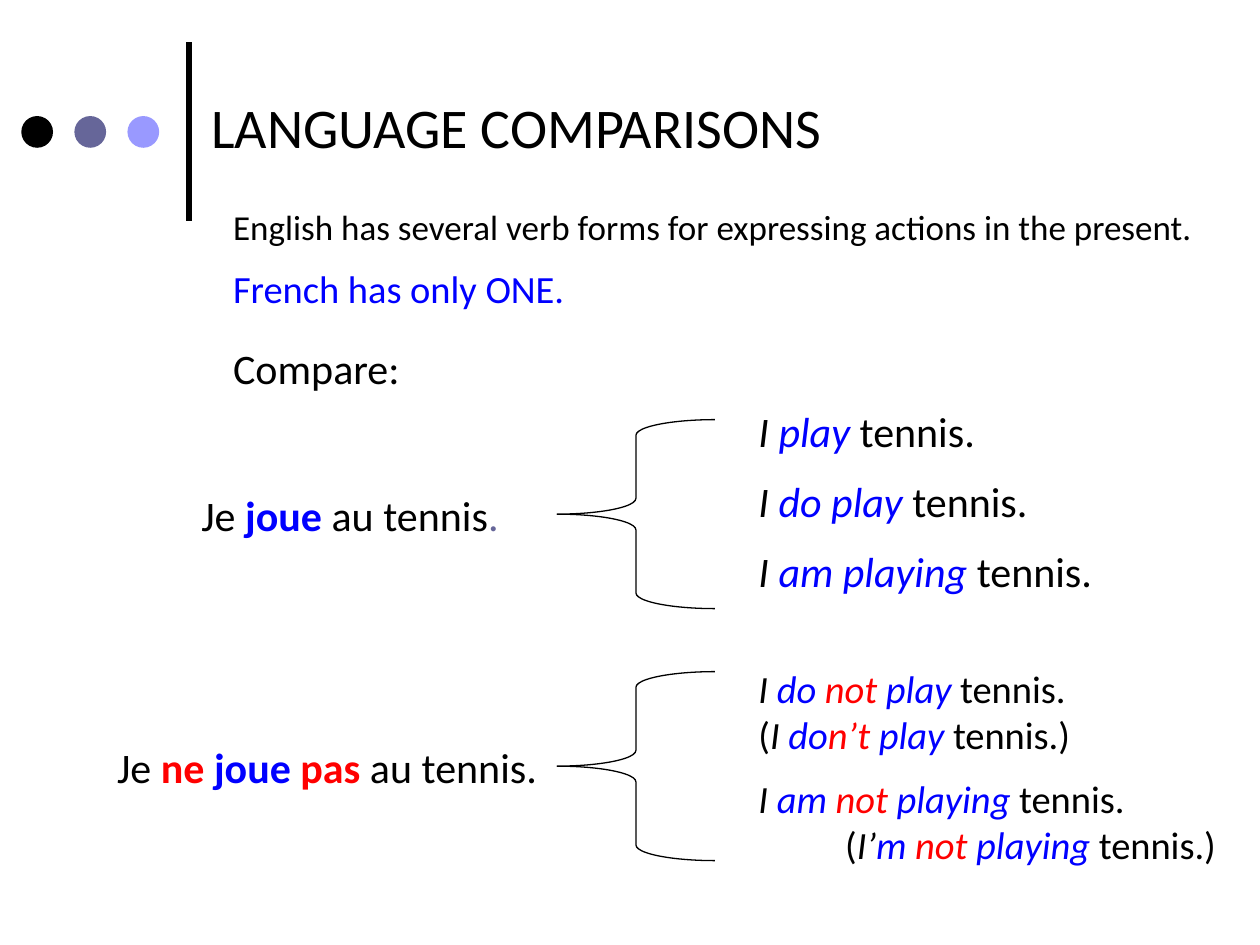
from lxml.etree import SubElement
from pptx import Presentation
from pptx.dml.color import RGBColor
from pptx.enum.shapes import MSO_CONNECTOR, MSO_SHAPE
from pptx.oxml.ns import qn
from pptx.util import Cm, Pt

BLACK = RGBColor(0x00, 0x00, 0x00)
BLUE = RGBColor(0x00, 0x00, 0xFF)
RED = RGBColor(0xFF, 0x00, 0x00)
SLATE = RGBColor(0x66, 0x66, 0x99)
LILAC = RGBColor(0x99, 0x99, 0xFF)


class SlideBuilder:
    """Draw styled elements on the current slide."""

    font = "Calibri"
    space_ratio = 0.47
    styles = {
        "plain": (BLACK, False, False),
        "italic": (BLACK, False, True),
        "blue": (BLUE, False, False),
        "slate": (SLATE, False, False),
        "verb": (BLUE, False, True),
        "negation": (RED, False, True),
        "bold verb": (BLUE, True, False),
        "bold negation": (RED, True, False),
    }

    def __init__(self, slide):
        self.s = slide

    def line(self, x1, y1, x2, y2, width):
        c = self.s.shapes.add_connector(
            MSO_CONNECTOR.STRAIGHT, Cm(x1), Cm(y1), Cm(x2), Cm(y2))
        c.line.color.rgb = BLACK
        c.line.width = Pt(width)
        SubElement(c._element.spPr, qn("a:effectLst"))

    def dot(self, x, y, size, color):
        sp = self.s.shapes.add_shape(
            MSO_SHAPE.OVAL, Cm(x), Cm(y), Cm(size), Cm(size))
        sp.shadow.inherit = False
        sp.fill.solid()
        sp.fill.fore_color.rgb = color
        sp.line.fill.background()

    def brace(self, x, y, w, h):
        sp = self.s.shapes.add_shape(
            MSO_SHAPE.LEFT_BRACE, Cm(x), Cm(y), Cm(w), Cm(h))
        sp.shadow.inherit = False
        sp.adjustments[0] = 0.1
        sp.fill.background()
        sp.line.color.rgb = BLACK
        sp.line.width = Pt(0.75)

    def text(self, x, y, w, h, *paragraphs):
        tf = self.s.shapes.add_textbox(Cm(x), Cm(y), Cm(w), Cm(h)).text_frame
        tf.word_wrap = True
        for i, (size, spaced, indent, runs) in enumerate(paragraphs):
            p = tf.add_paragraph() if i else tf.paragraphs[0]
            if i and spaced:
                p.space_before = Pt(round(size * self.space_ratio, 1))
            if indent:
                pPr = p._p.get_or_add_pPr()
                pPr.set("marL", str(Cm(indent)))
            for wording, style in runs:
                r = p.add_run()
                r.text = wording
                r.font.name = self.font
                r.font.size = Pt(size)
                r.font.color.rgb, r.font.bold, r.font.italic = self.styles[style]


def main():
    """Build the language comparison slide."""
    prs = Presentation()
    prs.slide_width, prs.slide_height = Cm(25.4), Cm(19.05)
    b = SlideBuilder(prs.slides.add_slide(prs.slide_layouts[6]))

    b.line(3.81, 4.45, 3.81, 0.84, 3)
    for i, color in enumerate((BLACK, SLATE, LILAC)):
        b.dot(0.43 + 1.07 * i, 2.34, 0.64, color)

    b.text(4.01, 1.75, 15.88, 1.63,
           (32, True, 0, [("LANGUAGE COMPARISONS", "plain")]))
    b.text(4.45, 4.01, 20.95, 2.51,
           (20, True, 0, [("English has several verb forms for expressing "
                           "actions in the present.", "plain")]),
           (22, True, 0, [("French has only ONE.", "blue")]))
    b.text(4.45, 6.78, 5.51, 1.27, (24, True, 0, [("Compare:", "plain")]))

    b.text(3.81, 9.75, 6.99, 1.27,
           (24, True, 0, [("Je ", "plain"), ("joue ", "bold verb"),
                          ("au tennis", "plain"), (".", "slate")]))
    b.text(15.04, 8.05, 7.62, 5.13,
           *[(24, True, 0, [("I ", "italic"), (verb, "verb"),
                            (" tennis.", "plain")])
             for verb in ("play", "do play", "am playing")])
    b.text(2.11, 14.83, 9.09, 1.27,
           (24, True, 0, [("Je ", "plain"), ("ne ", "bold negation"),
                          ("joue ", "bold verb"), ("pas ", "bold negation"),
                          ("au tennis.", "plain")]))
    b.text(15.04, 13.28, 10.36, 4.5,
           (22, False, 0, [("I ", "italic"), ("do ", "verb"),
                           ("not", "negation"), (" play ", "verb"),
                           ("tennis.", "plain")]),
           (22, False, 0, [("(", "plain"), ("I ", "italic"), ("do", "verb"),
                           ("n’t ", "negation"), ("play ", "verb"),
                           ("tennis.)", "plain")]),
           (22, True, 0, [("I ", "italic"), ("am ", "verb"),
                          ("not ", "negation"), ("playing ", "verb"),
                          ("tennis.", "plain")]),
           (22, False, 1.75, [("(", "plain"), ("I’", "italic"), ("m ", "verb"),
                              ("not", "negation"), (" playing ", "verb"),
                              ("tennis.)", "plain")]))

    for top in (8.46, 13.54):
        b.brace(11.23, top, 3.18, 3.81)

    prs.save("out.pptx")


if __name__ == "__main__":
    main()
